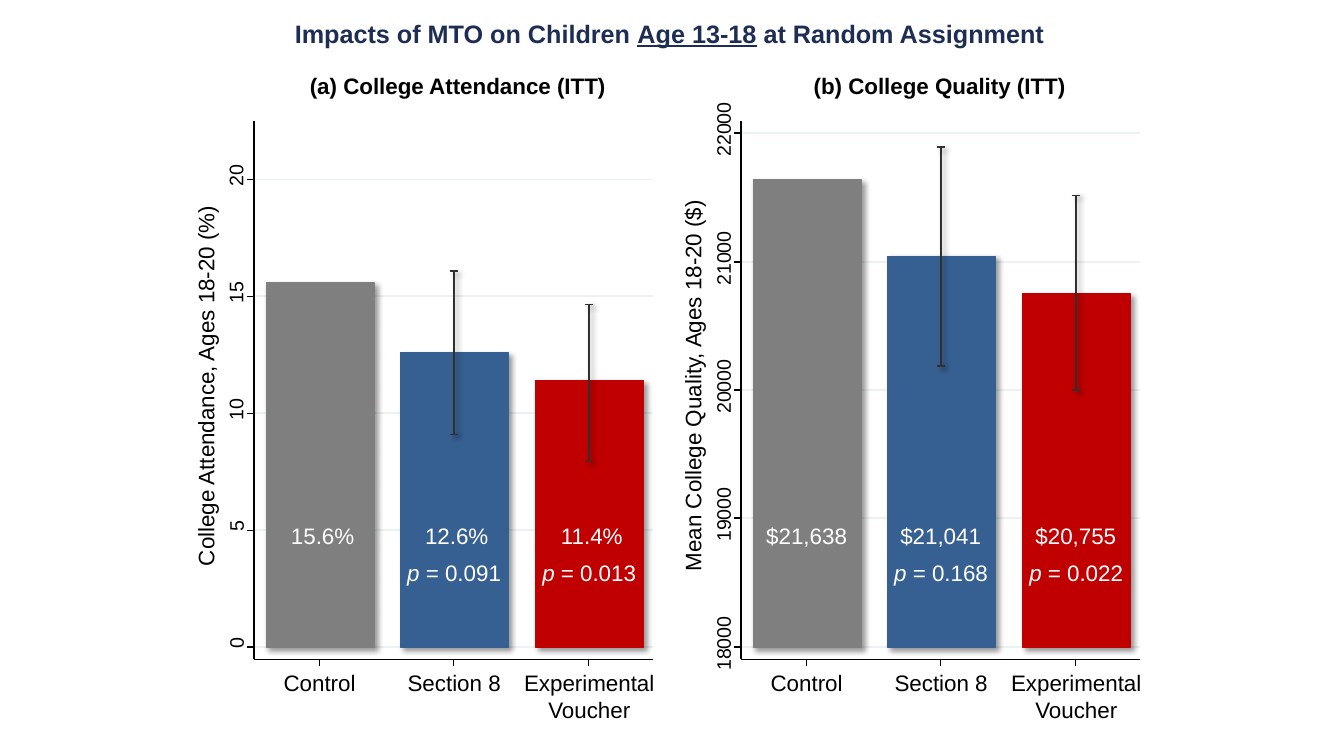
from copy import deepcopy
from pptx import Presentation
from pptx.dml.color import RGBColor
from pptx.enum.shapes import MSO_CONNECTOR as CON, MSO_SHAPE as SHAPE
from pptx.enum.text import MSO_ANCHOR as ANCHOR, MSO_AUTO_SIZE as FIT, PP_ALIGN as ALIGN
from pptx.oxml import parse_xml
from pptx.oxml.ns import nsdecls
from pptx.util import Pt

PX = 9144  # 100 px to the inch
BLACK = RGBColor(0x00, 0x00, 0x00)
WHITE = RGBColor(0xFF, 0xFF, 0xFF)
NAVY = RGBColor(0x1E, 0x2D, 0x53)
GRID = RGBColor(0xEA, 0xF2, 0xF3)
DARK = RGBColor(0x30, 0x30, 0x30)
GRAY = RGBColor(0x7F, 0x7F, 0x7F)
BLUE = RGBColor(0x37, 0x60, 0x92)
RED = RGBColor(0xC0, 0x00, 0x00)

PLAIN = parse_xml(f"<a:effectLst {nsdecls('a')}/>")
SHADE = parse_xml(
    f"<a:effectLst {nsdecls('a')}>"
    '<a:outerShdw blurRad="50800" dist="38100" dir="2700000" algn="tl" rotWithShape="0">'
    '<a:srgbClr val="000000"><a:alpha val="40000"/></a:srgbClr>'
    "</a:outerShdw></a:effectLst>")

TOP, ZERO, BASE, WIDE = 120, 642, 654, 396
GROUPS = [
    ("Control", 72, GRAY),
    ("Section 8", 93, BLUE),
    ("Experimental\nVoucher", 137, RED),
]
# Bars hold value, label, p-value and interval
PANELS = [
    dict(left=252, head="(a) College Attendance (ITT)", spot=(295, 318),
         name="College Attendance, Ages 18-20 (%)", span=362,
         ticks=range(0, 21, 5), unit=23.2, nudge=3,
         bars=[(15.6, "15.6%", None, None),
               (12.6, "12.6%", "0.091", (9.1, 16.08)),
               (11.4, "11.4%", "0.013", (7.97, 14.66))]),
    dict(left=735, head="(b) College Quality (ITT)", spot=(795, 274),
         name="Mean College Quality, Ages 18-20 ($)", span=372,
         ticks=range(18000, 22001, 1000), unit=0.1275, nudge=0,
         bars=[(21638, "$21,638", None, None),
               (21041, "$21,041", "0.168", (20188, 21890)),
               (20755, "$20,755", "0.022", (20000, 21514))]),
]

deck = Presentation()
deck.slide_width, deck.slide_height = 1333 * PX, 750 * PX
slide = deck.slides.add_slide(deck.slide_layouts[5])
shapes = slide.shapes


def line(x1, y1, x2, y2, color, width, effect=PLAIN):
    rule = shapes.add_connector(CON.STRAIGHT, x1 * PX, y1 * PX, x2 * PX, y2 * PX)
    rule.line.color.rgb = color
    rule.line.width = Pt(width)
    rule._element.spPr.append(deepcopy(effect))


def text(x, y, w, h, paras, size=16, color=BLACK, align=ALIGN.CENTER,
         pad=(0, 0), wrap=False, bold=False, turn=0, box=None):
    box = box or shapes.add_textbox(0, 0, 0, 0)
    box.left, box.top, box.width, box.height = x * PX, y * PX, w * PX, h * PX
    box.rotation = turn
    frame = box.text_frame
    frame.word_wrap, frame.auto_size = wrap, FIT.SHAPE_TO_FIT_TEXT
    frame.vertical_anchor = ANCHOR.TOP
    frame.margin_left = frame.margin_right = pad[0] * PX
    frame.margin_top = frame.margin_bottom = pad[1] * PX
    for n, runs in enumerate(paras):
        para = frame.add_paragraph() if n else frame.paragraphs[0]
        para.alignment = align
        for words, style in runs:
            run = para.add_run()
            run.text = words
            font = run.font
            font.name, font.size, font.color.rgb = "Arial", Pt(size), color
            font.bold, font.italic, font.underline = bold, style == "i", style == "u"


# Slide title
text(164, 13, 1000, 40,
     [[("Impacts of MTO on Children ", ""), ("Age 13-18", "u"),
       (" at Random Assignment", "")]],
     size=18, color=NAVY, pad=(10, 5), wrap=True, bold=True, box=shapes.title)

for panel in PANELS:
    left, ticks, unit = panel["left"], panel["ticks"], panel["unit"]
    right = left + WIDE
    mids = [left + 65 + 267 * n // 2 for n in range(len(GROUPS))]
    marks = [(tick, round(ZERO - (tick - ticks[0]) * unit)) for tick in ticks]

    # Grid
    for tick, y in marks:
        line(left, y, right, y, GRID, 1.25)

    # Bars
    for mid, group, bar in zip(mids, GROUPS, panel["bars"]):
        tall = round((bar[0] - ticks[0]) * unit)
        rect = shapes.add_shape(SHAPE.RECTANGLE, (mid - 53) * PX, (ZERO - tall) * PX,
                                107 * PX, tall * PX)
        rect.fill.solid()
        rect.fill.fore_color.rgb = rect.line.color.rgb = group[2]
        rect.line.width = 0
        rect._element.spPr.append(deepcopy(SHADE))

    # Error bars with caps
    for mid, bar in zip(mids, panel["bars"]):
        if bar[3]:
            low, high = [round(ZERO - (end - ticks[0]) * unit) for end in bar[3]]
            line(mid, high, mid, low, DARK, 1.25, SHADE)
            for y in (low, high):
                line(mid - 4, y, mid + 4, y, DARK, 1.25, SHADE)

    # Value axis
    line(left, BASE, left, TOP, BLACK, 0.88)
    for tick, y in marks:
        line(left, y, left - 7, y, BLACK, 0.88)
        wide = 11 * len(str(tick))
        text(left - 18 - wide // 2, y - 16, wide, 24, [[(str(tick), "")]],
             size=14, align=ALIGN.LEFT, turn=270)
    span = panel["span"]
    text(left - 48 - span // 2, 367, span, 27, [[(panel["name"], "")]],
         align=ALIGN.LEFT, turn=270)

    # Group axis
    line(left, BASE, right, BASE, BLACK, 0.88)
    for mid, (name, wide, _) in zip(mids, GROUPS):
        line(mid, BASE, mid, BASE + 7, BLACK, 0.88)
        rows = [[(row, "")] for row in name.split("\n")]
        text(mid - wide // 2, 664, wide, 27 * len(rows), rows)

    # Panel heading
    spot, wide = panel["spot"]
    text(spot, 67, wide, 37, [[(panel["head"], "")]], pad=(10, 5), bold=True)

    # Bar labels
    for mid, (_, label, prob, _) in zip(mids, panel["bars"]):
        text(mid - 53 + panel["nudge"], 513, 106, 37, [[(label, "")]],
             color=WHITE, pad=(10, 5), wrap=True)
        if prob:
            text(mid - 56, 550, 121, 37, [[("p", "i"), (f" = {prob}", "")]],
                 color=WHITE, align=ALIGN.LEFT, pad=(10, 5), wrap=True)

deck.save("out.pptx")
